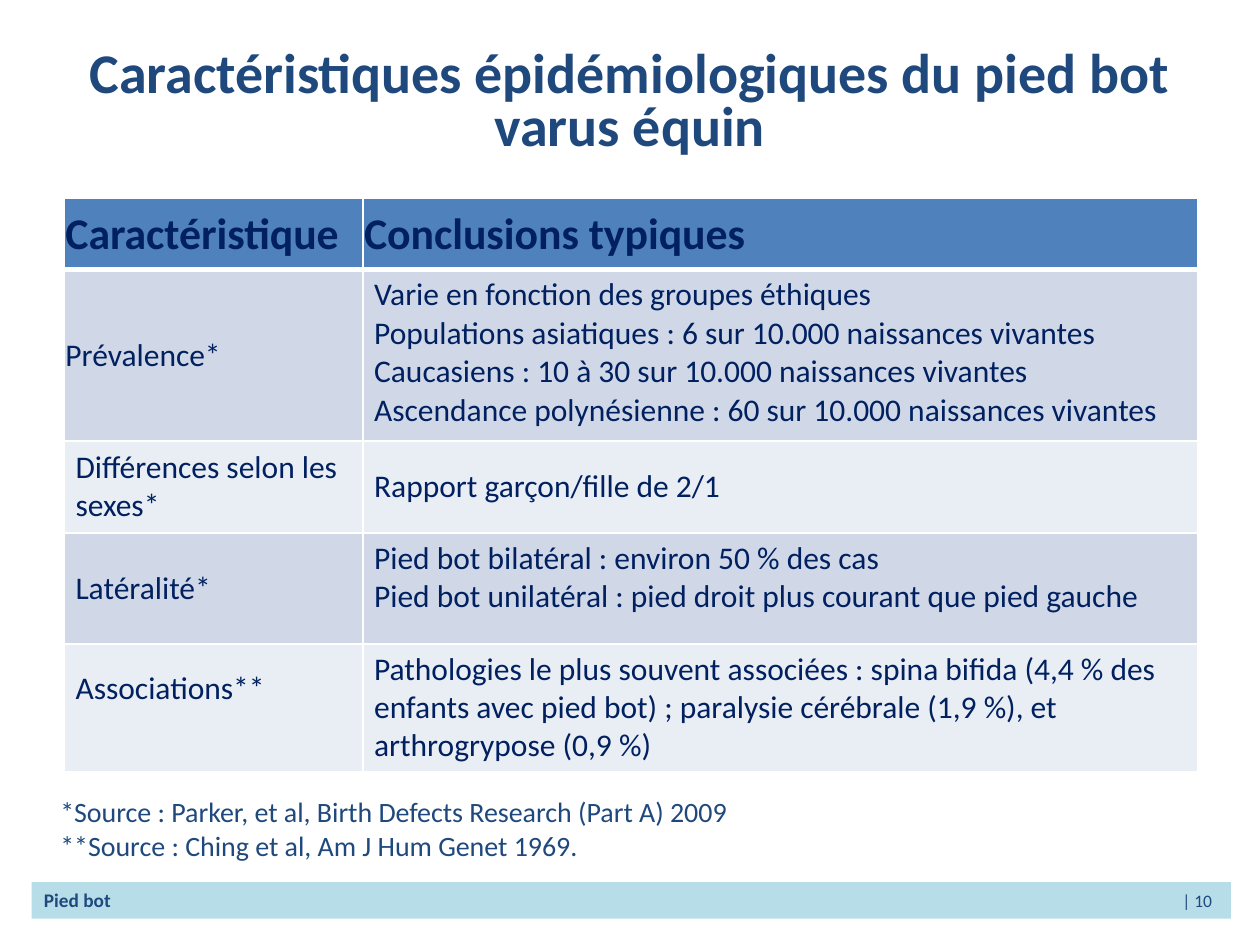
from lxml.etree import SubElement
from pptx import Presentation
from pptx.dml.color import RGBColor
from pptx.enum.shapes import MSO_SHAPE
from pptx.enum.text import MSO_ANCHOR, MSO_AUTO_SIZE, PP_ALIGN
from pptx.oxml.ns import qn
from pptx.util import Inches, Pt

COLORS = {
    "title": "1F497D", "body": "002060", "header": "4F81BD", "odd": "D0D8E8",
    "even": "E9EDF4", "border": "FFFFFF", "footer": "B7DEE8",
}
FONT = "Calibri"
COLUMNS = (2.37, 6.63)
ROW_HEIGHTS = (0.57, 1.36, 0.73, 0.88, 1.0)
TIGHT = (0.01, 0.01, 0.01, 0)
NORMAL = (0.09, 0.05, 0.09, 0.05)
RAISED = (0.09, 0.05, 0.09, 0.35)
ROWS = (
    (("Caractéristique", TIGHT), ("Conclusions typiques", TIGHT)),
    (("Prévalence*", TIGHT),
     ("Varie en fonction des groupes éthiques\n"
      "Populations asiatiques : 6 sur 10.000 naissances vivantes\n"
      "Caucasiens : 10 à 30 sur 10.000 naissances vivantes\n"
      "Ascendance polynésienne : 60 sur 10.000 naissances vivantes", NORMAL)),
    (("Différences selon les sexes*", NORMAL), ("Rapport garçon/fille de 2/1", NORMAL)),
    (("Latéralité*", NORMAL),
     ("Pied bot bilatéral : environ 50 % des cas\n"
      "Pied bot unilatéral : pied droit plus courant que pied gauche", NORMAL)),
    (("Associations**", RAISED),
     ("Pathologies le plus souvent associées : spina bifida (4,4 % des enfants "
      "avec pied bot) ; paralysie cérébrale (1,9 %), et arthrogrypose (0,9 %)", NORMAL)),
)
SOURCES = ("*Source : Parker, et al, Birth Defects Research (Part A) 2009\n"
           "**Source : Ching et al, Am J Hum Genet 1969.")


def color(name):
    """Return the named colour."""
    return RGBColor.from_string(COLORS[name])


def add_run(paragraph, text, size, fill="title", bold=False):
    """Add one formatted run to a paragraph."""
    run = paragraph.add_run()
    run.text = text
    run.font.name, run.font.size, run.font.bold = FONT, Pt(size), bold
    run.font.color.rgb = color(fill)


def write(frame, text, align=PP_ALIGN.LEFT, level=0, spacing=None, **style):
    """Write each line of text as a formatted paragraph."""
    for index, line in enumerate(text.split("\n")):
        paragraph = frame.add_paragraph() if index else frame.paragraphs[0]
        paragraph.alignment, paragraph.level = align, level
        if spacing:
            paragraph.line_spacing = Pt(spacing)
        add_run(paragraph, line, **style)


def set_borders(cell, top, bottom):
    """Draw the four borders of a cell."""
    properties = cell._tc.get_or_add_tcPr()
    for tag, width in (("a:lnL", 1), ("a:lnR", 1), ("a:lnT", top), ("a:lnB", bottom)):
        line = SubElement(properties, qn(tag), w=str(Pt(width)))
        SubElement(SubElement(line, qn("a:solidFill")), qn("a:srgbClr"), val=COLORS["border"])


def add_title(slide, box):
    """Place and format the title placeholder."""
    title = slide.shapes.title
    title.left, title.top, title.width, title.height = map(Inches, box)
    frame = title.text_frame
    frame.auto_size, frame.word_wrap = MSO_AUTO_SIZE.NONE, True
    frame.vertical_anchor = MSO_ANCHOR.BOTTOM
    write(frame, "Caractéristiques épidémiologiques du pied bot varus équin",
          align=PP_ALIGN.CENTER, spacing=30, size=32, bold=True)


def add_facts_table(slide, box):
    """Add the table of characteristics."""
    table = slide.shapes.add_table(len(ROWS), len(COLUMNS), *map(Inches, box)).table
    for column, width in zip(table.columns, COLUMNS):
        column.width = Inches(width)
    for row_index, (row, height) in enumerate(zip(ROWS, ROW_HEIGHTS)):
        table.rows[row_index].height = Inches(height)
        is_header = row_index == 0
        band = "header" if is_header else ("even", "odd")[row_index % 2]
        for column_index, (text, margins) in enumerate(row):
            cell = table.cell(row_index, column_index)
            (cell.margin_left, cell.margin_top,
             cell.margin_right, cell.margin_bottom) = map(Inches, margins)
            is_list = column_index == 1 and row_index in (1, 3, 4)
            cell.vertical_anchor = MSO_ANCHOR.TOP if is_list else MSO_ANCHOR.MIDDLE
            set_borders(cell, 3 if row_index == 1 else 1, 3 if is_header else 1)
            cell.fill.solid()
            cell.fill.fore_color.rgb = color(band)
            write(cell.text_frame, text, size=25 if is_header else 18,
                  fill="body", bold=is_header)


def add_sources(slide, box):
    """Add the source notes under the table."""
    frame = slide.shapes.add_textbox(*map(Inches, box)).text_frame
    frame.word_wrap = True
    write(frame, SOURCES, level=1, size=16)


def add_footer(slide, box):
    """Add the footer band with the page number on a right tab."""
    band = slide.shapes.add_shape(MSO_SHAPE.RECTANGLE, *map(Inches, box))
    band.shadow.inherit = False
    band.fill.solid()
    band.fill.fore_color.rgb = color("footer")
    band.line.fill.background()
    frame = band.text_frame
    frame.word_wrap, frame.vertical_anchor = True, MSO_ANCHOR.MIDDLE
    write(frame, "Pied bot", size=11, bold=True)
    paragraph = frame.paragraphs[0]
    add_run(paragraph, "\t| 10", size=10)
    tabs = SubElement(paragraph._p.get_or_add_pPr(), qn("a:tabLst"))
    SubElement(tabs, qn("a:tab"), pos=str(Inches(box[2] - 0.25)), algn="r")


def main():
    """Build and save the slide."""
    presentation = Presentation()
    presentation.slide_width, presentation.slide_height = Inches(10), Inches(7.5)
    slide = presentation.slides.add_slide(presentation.slide_layouts[5])
    add_footer(slide, (0.25, 7, 9.52, 0.29))
    add_title(slide, (0.5, 0.69, 9, 0.61))
    add_facts_table(slide, (0.51, 1.57, sum(COLUMNS), sum(ROW_HEIGHTS)))
    add_sources(slide, (-0.12, 6.26, 8.35, 0.94))
    presentation.save("out.pptx")


if __name__ == "__main__":
    main()
